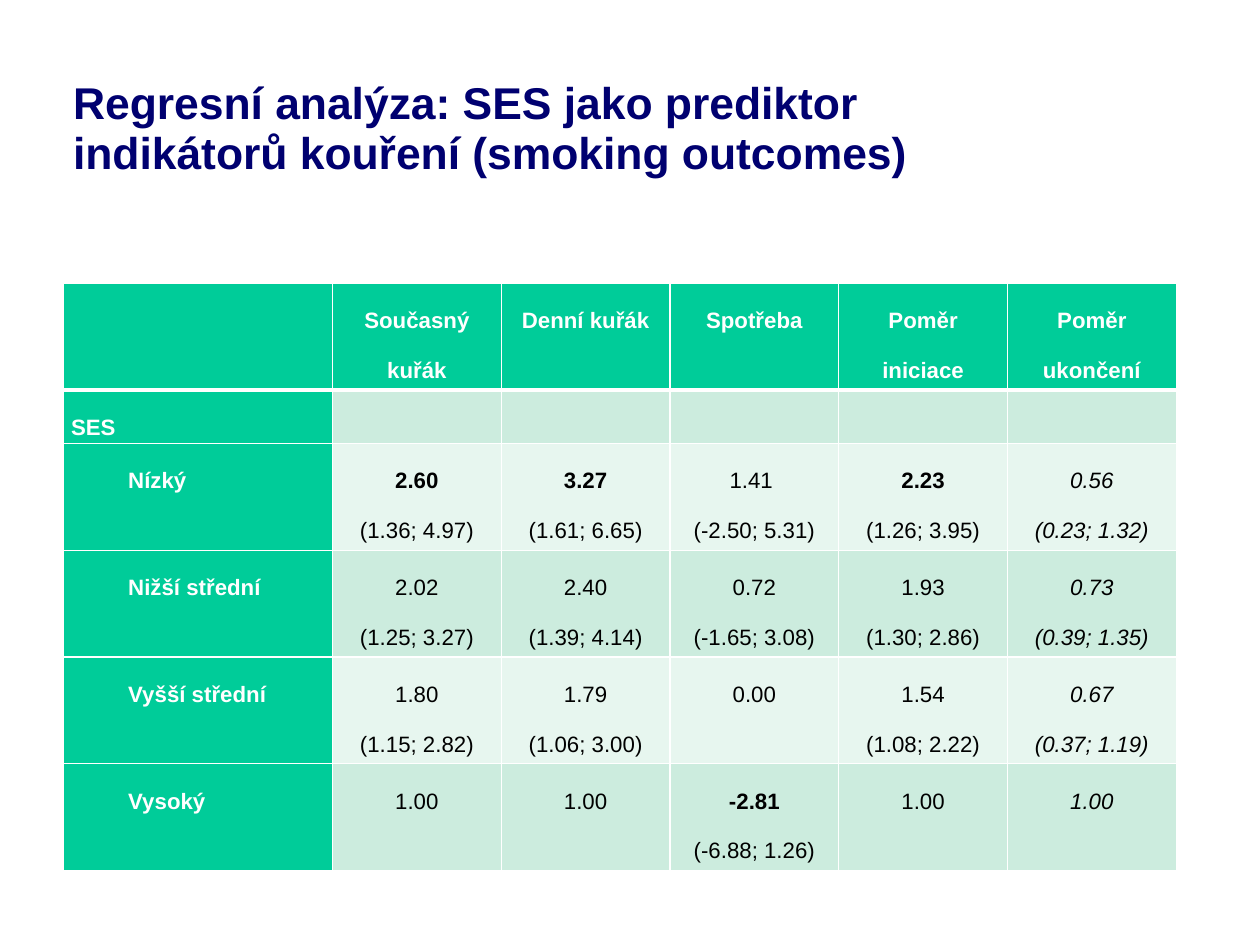
from dataclasses import dataclass
from lxml.etree import SubElement
from pptx import Presentation
from pptx.dml.color import RGBColor
from pptx.enum.text import MSO_ANCHOR, PP_ALIGN
from pptx.oxml.ns import qn
from pptx.util import Pt

NAVY, GREEN, WHITE, BLACK = "000070", "00CC99", "FFFFFF", "000000"
DARK, LIGHT = "CCECDE", "E7F6EF"
LEFT, MID = PP_ALIGN.LEFT, PP_ALIGN.CENTER
WIDTHS = [169.7] + [106.3] * 5
TALL = 340.6


@dataclass
class Band:
    label: str
    cells: list[str]
    indent: float = 36
    bold: tuple[int, ...] = ()


HEAD = ["", "Současný kuřák", "Denní kuřák", "Spotřeba",
        "Poměr iniciace", "Poměr ukončení"]
BANDS = [
    Band("SES", [""] * 5, indent=0),
    Band("Nízký", ["2.60|(1.36; 4.97)", "3.27|(1.61; 6.65)", "1.41 |(-2.50; 5.31)",
                   "2.23|(1.26; 3.95)", "0.56|(0.23; 1.32)"], bold=(1, 2, 4)),
    Band("Nižší střední", ["2.02|(1.25; 3.27)", "2.40|(1.39; 4.14)", "0.72|(-1.65; 3.08)",
                           "1.93|(1.30; 2.86)", "0.73|(0.39; 1.35)"]),
    Band("Vyšší střední", ["1.80|(1.15; 2.82)", "1.79|(1.06; 3.00)", "0.00",
                           "1.54|(1.08; 2.22)", "0.67|(0.37; 1.19)"]),
    Band("Vysoký", ["1.00", "1.00", "-2.81|(-6.88; 1.26)", "1.00", "1.00"], bold=(3,)),
]


def tint(code: str) -> RGBColor:
    return RGBColor.from_string(code)


def write(para, text: str, *, size: float = 14, color: str = BLACK, bold: bool = False,
          slant: bool = False, align=MID, space: float = 2, indent: float = 0) -> None:
    if not text:
        return
    if indent:
        para._p.get_or_add_pPr().set("marL", str(Pt(indent)))
    para.text = text
    para.alignment = align
    para.line_spacing = space
    for run in para.runs:
        font = run.font
        font.name = "Arial"
        font.size = Pt(size)
        font.bold = bold
        font.italic = slant
        font.color.rgb = tint(color)


def edge(cell, side: str, width: float) -> None:
    line = SubElement(cell._tc.get_or_add_tcPr(), qn(f"a:{side}"), w=str(Pt(width)))
    SubElement(SubElement(line, qn("a:solidFill")), qn("a:srgbClr"), val=WHITE)


def dress(cell, row: int, fill: str) -> None:
    edge(cell, "lnL", 1)
    edge(cell, "lnR", 1)
    edge(cell, "lnT", 3 if row == 1 else 1)
    edge(cell, "lnB", 3 if row == 0 else 1)
    cell.fill.solid()
    cell.fill.fore_color.rgb = tint(fill)
    cell.margin_left = cell.margin_right = Pt(5)
    cell.margin_top = cell.margin_bottom = 0


def add_title(slide) -> None:
    box = slide.shapes.add_textbox(Pt(46), Pt(42.5), Pt(536), Pt(70.5))
    frame = box.text_frame
    frame.word_wrap = True
    frame.vertical_anchor = MSO_ANCHOR.BOTTOM
    frame.margin_left = frame.margin_right = frame.margin_top = frame.margin_bottom = 0
    write(frame.paragraphs[0],
          "Regresní analýza: SES jako prediktor\vindikátorů kouření (smoking outcomes)",
          size=28, color=NAVY, bold=True, align=LEFT, space=0.93)


def add_grid(slide) -> None:
    holder = slide.shapes.add_table(len(BANDS) + 1, len(WIDTHS), Pt(39.8), Pt(178.4),
                                    Pt(sum(WIDTHS)), Pt(TALL))
    grid = holder.table
    grid.horz_banding = grid.first_row = False
    for col, width in zip(grid.columns, WIDTHS):
        col.width = Pt(width)
    for row in grid.rows:
        row.height = Pt(0)
    holder.height = Pt(TALL)

    for col, text in enumerate(HEAD):
        cell = grid.cell(0, col)
        dress(cell, 0, GREEN)
        write(cell.text_frame.paragraphs[0], text, color=WHITE, bold=True)

    for row, band in enumerate(BANDS, 1):
        cell = grid.cell(row, 0)
        dress(cell, row, GREEN)
        write(cell.text_frame.paragraphs[0], band.label, color=WHITE, bold=True,
              align=LEFT, indent=band.indent)
        for col, text in enumerate(band.cells, 1):
            cell = grid.cell(row, col)
            dress(cell, row, DARK if row % 2 else LIGHT)
            frame = cell.text_frame
            for spot, part in enumerate(text.split("|")):
                para = frame.add_paragraph() if spot else frame.paragraphs[0]
                write(para, part, bold=spot == 0 and col in band.bold,
                      slant=col == len(band.cells))


def main() -> None:
    deck = Presentation()
    deck.slide_width, deck.slide_height = Pt(793.75), Pt(595.25)
    slide = deck.slides.add_slide(deck.slide_layouts[6])
    add_title(slide)
    add_grid(slide)
    deck.save("out.pptx")


if __name__ == "__main__":
    main()
